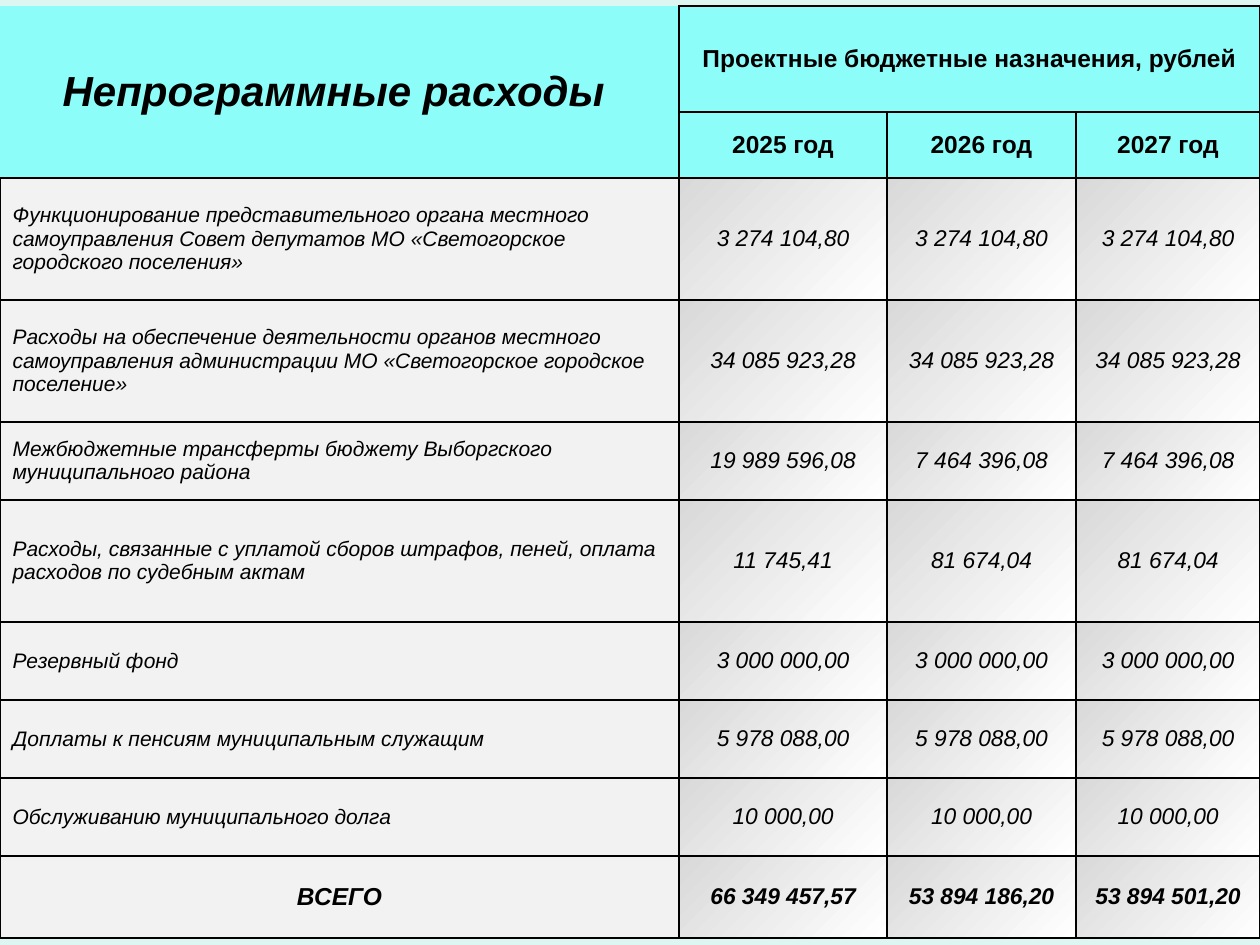
from lxml.etree import SubElement
from pptx import Presentation
from pptx.dml.color import RGBColor
from pptx.enum.text import MSO_ANCHOR, PP_ALIGN
from pptx.oxml.ns import qn
from pptx.util import Emu, Pt

PX_PER_INCH = 126
BACKGROUND = RGBColor(0xDE, 0xF6, 0xF1)
HEADER = RGBColor(0x8D, 0xFD, 0xFA)
LABEL = RGBColor(0xF2, 0xF2, 0xF2)
VALUE_DARK = RGBColor(0xD9, 0xD9, 0xD9)
WHITE = RGBColor(0xFF, 0xFF, 0xFF)
BLACK = RGBColor(0x00, 0x00, 0x00)

COL_WIDTHS = [679, 208, 189, 184]
ROW_HEIGHTS = [106, 66, 122, 122, 78, 122, 78, 78, 78, 82]
YEARS = ["2025 год", "2026 год", "2027 год"]
EXPENSES = [
    ("Функционирование представительного органа местного самоуправления "
     "Совет депутатов МО «Светогорское городского поселения»",
     "3 274 104,80", "3 274 104,80", "3 274 104,80"),
    ("Расходы на обеспечение деятельности органов местного самоуправления "
     "администрации МО «Светогорское городское поселение»",
     "34 085 923,28", "34 085 923,28", "34 085 923,28"),
    ("Межбюджетные трансферты бюджету Выборгского муниципального района",
     "19 989 596,08", "7 464 396,08", "7 464 396,08"),
    ("Расходы, связанные с уплатой сборов штрафов, пеней, оплата расходов "
     "по судебным актам",
     "11 745,41", "81 674,04", "81 674,04"),
    ("Резервный фонд", "3 000 000,00", "3 000 000,00", "3 000 000,00"),
    ("Доплаты к пенсиям муниципальным служащим",
     "5 978 088,00", "5 978 088,00", "5 978 088,00"),
    ("Обслуживанию муниципального долга",
     "10 000,00", "10 000,00", "10 000,00"),
]
TOTAL = ("ВСЕГО", "66 349 457,57", "53 894 186,20", "53 894 501,20")


def px(n):
    return Emu(round(n * 914400 / PX_PER_INCH))


def write(cell, text, size, bold=False, italic=False, align=PP_ALIGN.CENTER):
    cell.vertical_anchor = MSO_ANCHOR.MIDDLE
    p = cell.text_frame.paragraphs[0]
    p.alignment = align
    r = p.add_run()
    r.text = text
    r.font.name = "Arial"
    r.font.size = Pt(size)
    r.font.bold = bold
    r.font.italic = italic
    r.font.color.rgb = BLACK


def set_borders(cell, sides="LRTB"):
    """Draw a thin black line on the named sides and none on the others."""
    tcPr = cell._tc.get_or_add_tcPr()
    for side in "LRTB":
        ln = SubElement(tcPr, qn(f"a:ln{side}"), w=str(Pt(1)))
        if side in sides:
            fill = SubElement(ln, qn("a:solidFill"))
            SubElement(fill, qn("a:srgbClr"), val=str(BLACK))
        else:
            SubElement(ln, qn("a:noFill"))


def fill_solid(cell, color):
    cell.fill.solid()
    cell.fill.fore_color.rgb = color


def fill_gradient(cell):
    cell.fill.gradient()
    cell.fill.gradient_angle = 315
    for stop, color in zip(cell.fill.gradient_stops, (VALUE_DARK, WHITE)):
        stop.color.rgb = color


def add_grid(slide):
    frame = slide.shapes.add_table(
        len(ROW_HEIGHTS), len(COL_WIDTHS), px(0), px(6),
        px(sum(COL_WIDTHS)), px(sum(ROW_HEIGHTS)))
    table = frame.table
    table.first_row = table.horz_banding = False
    for col, width in zip(table.columns, COL_WIDTHS):
        col.width = px(width)
    for row, height in zip(table.rows, ROW_HEIGHTS):
        row.height = px(height)
    return table


def format_cells(table):
    for i in range(len(ROW_HEIGHTS)):
        for j in range(len(COL_WIDTHS)):
            cell = table.cell(i, j)
            is_header = i < 2
            set_borders(cell, "RB" if is_header and j == 0 else "LRTB")
            if is_header:
                fill_solid(cell, HEADER)
            elif j == 0:
                fill_solid(cell, LABEL)
            else:
                fill_gradient(cell)


def write_header(table):
    table.cell(0, 0).merge(table.cell(1, 0))
    table.cell(0, 1).merge(table.cell(0, 3))
    write(table.cell(0, 0), "Непрограммные расходы ", 24, bold=True, italic=True)
    write(table.cell(0, 1), "Проектные бюджетные назначения, рублей", 14, bold=True)
    for j, year in enumerate(YEARS, 1):
        write(table.cell(1, j), year, 14, bold=True)


def write_row(table, i, row, label_size=12, label_align=PP_ALIGN.LEFT, bold=False):
    label, *values = row
    write(table.cell(i, 0), label, label_size, bold, True, label_align)
    for j, value in enumerate(values, 1):
        write(table.cell(i, j), value, 13, bold, True)


def main():
    prs = Presentation()
    prs.slide_width, prs.slide_height = px(1260), px(945)
    s = prs.slides.add_slide(prs.slide_layouts[6])
    s.background.fill.solid()
    s.background.fill.fore_color.rgb = BACKGROUND

    # Table frame and header
    table = add_grid(s)
    format_cells(table)
    write_header(table)

    # Expense lines and the total
    for i, row in enumerate(EXPENSES, 2):
        write_row(table, i, row)
    write_row(table, len(ROW_HEIGHTS) - 1, TOTAL, 14, PP_ALIGN.CENTER, bold=True)

    prs.save("out.pptx")


if __name__ == "__main__":
    main()
